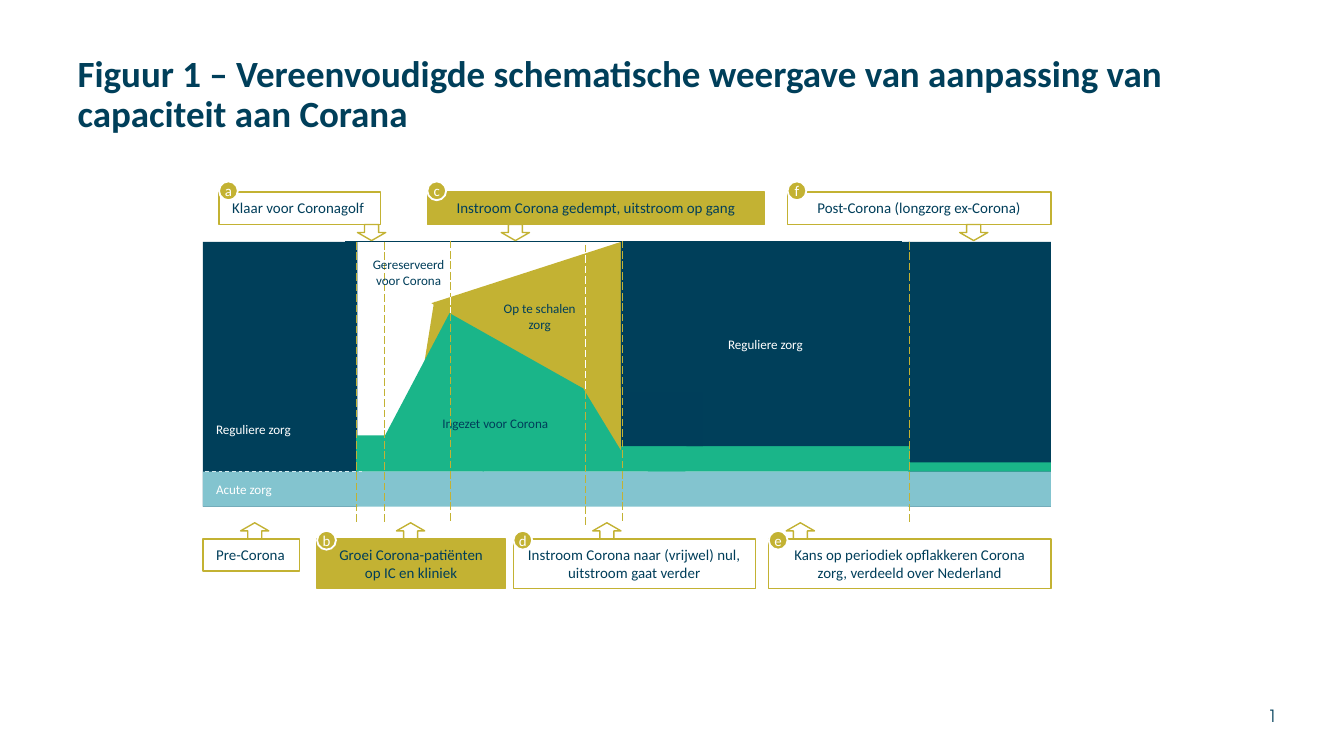
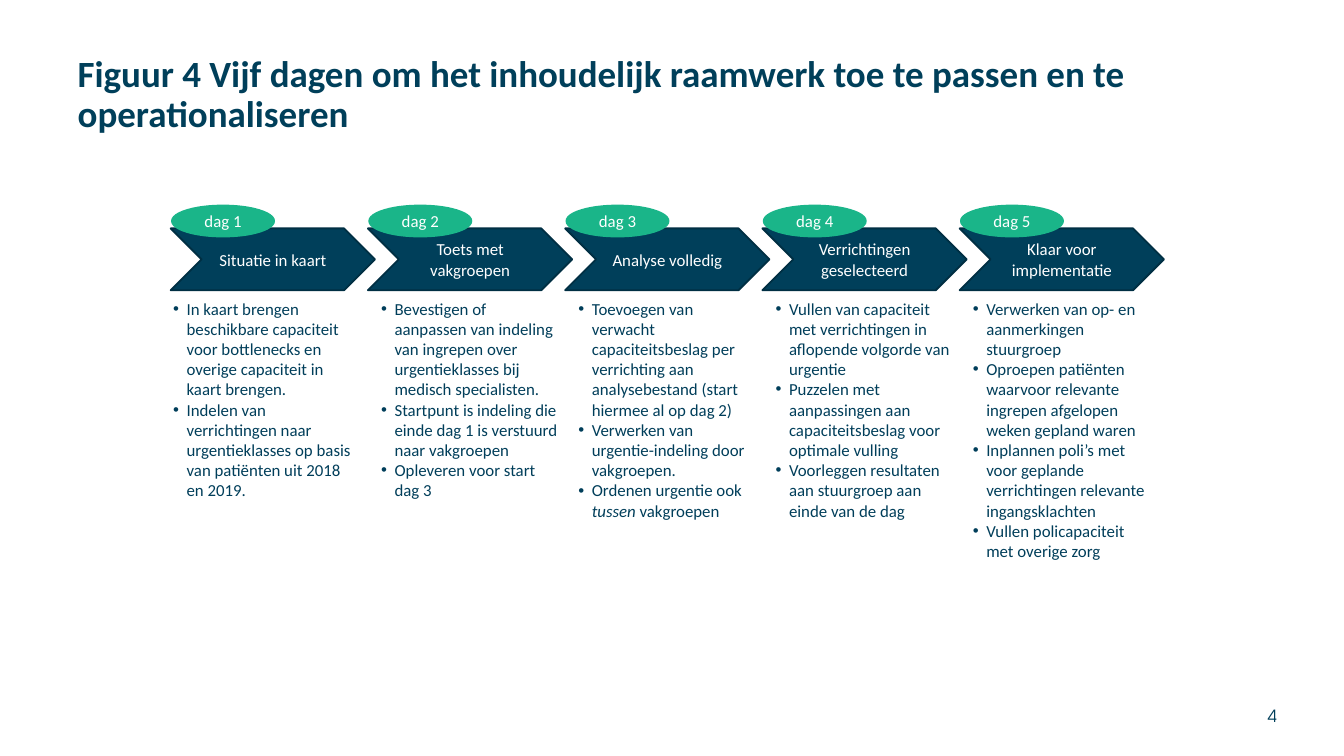
import dataclasses

import pptx
import pptx.dml.color
import pptx.enum.dml
import pptx.enum.shapes
import pptx.enum.text
import pptx.oxml
import pptx.oxml.ns
import pptx.util
from pptx.util import Inches

SHAPE = pptx.enum.shapes.MSO_SHAPE
DASH = pptx.enum.dml.MSO_LINE
ALIGN = pptx.enum.text.PP_ALIGN
ANCHOR = pptx.enum.text.MSO_ANCHOR


@dataclasses.dataclass(frozen=True)
class Theme:
    navy: str = "003F5A"
    text: str = "003E5A"
    edge: str = "002F43"
    green: str = "1AB589"
    gold: str = "C3B233"
    blue: str = "83C4CF"
    white: str = "FFFFFF"
    font: str = "Calibri"
    number_font: str = "TeX Gyre Adventor"
    title_size: float = 19.8
    body_size: float = 9
    callout_size: float = 8
    area_size: float = 7


THEME = Theme()


def rgb(value):
    return pptx.dml.color.RGBColor.from_string(value)


# Text
def add_bullet(paragraph):
    properties = paragraph._p.get_or_add_pPr()
    properties.set("marL", str(Inches(0.1)))
    properties.set("indent", str(Inches(-0.1)))
    namespace = pptx.oxml.ns.nsdecls("a")
    for tag in ('buFont typeface="Arial"', 'buChar char="•"'):
        properties.append(pptx.oxml.parse_xml(f"<a:{tag} {namespace}/>"))


def write(shape, paragraphs, size, color=THEME.text, align=ALIGN.CENTER,
          anchor=ANCHOR.MIDDLE, margins=(0.1, 0.05, 0.1, 0.05), wrap=True,
          bold=False, font=THEME.font, bullets=False, spacing=None):
    """Fill a shape with paragraphs; words between asterisks are italic."""
    frame = shape.text_frame
    frame.word_wrap = wrap
    frame.vertical_anchor = anchor
    (frame.margin_left, frame.margin_top,
     frame.margin_right, frame.margin_bottom) = map(Inches, margins)
    for index, content in enumerate(paragraphs):
        paragraph = frame.add_paragraph() if index else frame.paragraphs[0]
        paragraph.alignment = align
        if spacing:
            paragraph.line_spacing = spacing
        if bullets:
            add_bullet(paragraph)
        for part, words in enumerate(content.split("*")):
            run = paragraph.add_run()
            run.text = words
            run.font.name = font
            run.font.size = pptx.util.Pt(size)
            run.font.bold = bold
            run.font.italic = part % 2 == 1
            run.font.color.rgb = rgb(color)


def add_text(shapes, box, paragraphs, size, **options):
    shape = shapes.add_textbox(*map(Inches, box))
    write(shape, paragraphs, size, **options)


# Shapes and lines
def add_shape(shapes, kind, box, fill=None, line=None, width=0.75,
              rotation=0, adjustment=None):
    shape = shapes.add_shape(kind, *map(Inches, box))
    shape.shadow.inherit = False
    shape.rotation = rotation
    if adjustment is not None:
        shape.adjustments[0] = adjustment
    if fill:
        shape.fill.solid()
        shape.fill.fore_color.rgb = rgb(fill)
    else:
        shape.fill.background()
    if line:
        shape.line.color.rgb = rgb(line)
        shape.line.width = pptx.util.Pt(width)
    else:
        shape.line.fill.background()
    return shape


def add_line(shapes, start, end, color, dash=None):
    line = shapes.add_connector(pptx.enum.shapes.MSO_CONNECTOR.STRAIGHT,
                                *map(Inches, (*start, *end)))
    line.line.color.rgb = rgb(color)
    line.line.width = pptx.util.Pt(0.5)
    if dash:
        line.line.dash_style = dash
    line._element.spPr.append(pptx.oxml.parse_xml(
        f'<a:effectLst {pptx.oxml.ns.nsdecls("a")}/>'))


# Parts of the slides
def add_slide(presentation, title, number):
    slide = presentation.slides.add_slide(presentation.slide_layouts[6])
    add_text(slide.shapes, (9.1, 5.2, 0.5, 0.3), [number], THEME.body_size,
             color=THEME.navy, align=ALIGN.RIGHT, anchor=ANCHOR.TOP,
             font=THEME.number_font)
    add_text(slide.shapes, (0.48, 0.42, 9.04, 0.58), [title],
             THEME.title_size, color=THEME.navy, align=ALIGN.LEFT, bold=True,
             spacing=0.9)
    return slide


def add_callout(slide, letter, label, box, arrow_left, filled=False,
                one_line=False):
    """Framed phase label with an arrow to the diagram and a letter badge."""
    left, top, width, height = box
    above = top < 2
    shapes = slide.shapes.add_group_shape().shapes
    frame = add_shape(shapes, SHAPE.RECTANGLE, box,
                      THEME.gold if filled else None, THEME.gold)
    write(frame, [label], THEME.callout_size, anchor=ANCHOR.TOP,
          wrap=not one_line, align=ALIGN.LEFT if one_line else ALIGN.CENTER)
    arrow_top = top + height if above else top - 0.12
    add_shape(shapes, SHAPE.DOWN_ARROW, (arrow_left, arrow_top, 0.21, 0.12),
              line=THEME.gold, rotation=0 if above else 180)
    if letter:
        badge_top = top - (0.08 if above else 0.06)
        badge = add_shape(shapes, SHAPE.OVAL, (left, badge_top, 0.14, 0.14),
                          THEME.gold, THEME.white, 1)
        write(badge, [letter], THEME.callout_size, THEME.white,
              margins=(0, 0, 0, 0), wrap=False)


def add_day(slide, day, left, heading, tasks, tasks_left):
    shapes = slide.shapes.add_group_shape().shapes
    chevron = add_shape(shapes, SHAPE.CHEVRON, (left, 1.7, 1.52, 0.46),
                        THEME.navy, THEME.edge, 1)
    write(chevron, [heading], THEME.body_size, THEME.white,
          margins=(0.05, 0, 0.05, 0))
    add_text(shapes, (tasks_left, 2.17, 1.52, 2.07), tasks, THEME.body_size,
             align=ALIGN.LEFT, anchor=ANCHOR.TOP, bullets=True)
    oval = add_shape(shapes, SHAPE.OVAL, (left + 0.01, 1.53, 0.76, 0.23),
                     THEME.green, THEME.green, 1)
    write(oval, [f"dag {day}"], THEME.body_size, THEME.white,
          margins=(0, 0, 0, 0))


def draw_care_areas(shapes):
    # Regular care before and after, reserved and scaled-up care
    before = add_shape(shapes, SHAPE.RECTANGLE, (1.51, 1.8, 1.15, 1.97),
                       THEME.navy)
    write(before, ["Reguliere zorg"], THEME.area_size, THEME.white,
          align=ALIGN.LEFT, anchor=ANCHOR.BOTTOM,
          margins=(0.1, 0.05, 0.1, 0.52))
    add_shape(shapes, SHAPE.RECTANGLE, (2.65, 3.24, 0.95, 0.27), THEME.green)
    add_shape(shapes, SHAPE.RECTANGLE, (6.76, 1.8, 1.06, 1.97), THEME.navy)
    add_shape(shapes, SHAPE.ISOSCELES_TRIANGLE, (3.26, 1.75, 1.31, 1.41),
              THEME.gold, rotation=270, adjustment=0.652)
    for box in ((6.76, 3.44, 1.06, 0.07), (3.59, 3.32, 1.51, 0.19),
                (4.82, 3.32, 1.95, 0.19)):
        add_shape(shapes, SHAPE.RECTANGLE, box, THEME.green)
    add_line(shapes, (2.57, 1.8), (6.71, 1.8), THEME.navy)
    add_line(shapes, (1.13, 3.51), (2.71, 3.51), THEME.white, DASH.DASH)
    after = add_shape(shapes, SHAPE.RECTANGLE, (4.62, 1.8, 2.15, 1.52),
                      THEME.navy)
    write(after, ["Reguliere zorg"], THEME.area_size, THEME.white)

    # Corona care
    add_shape(shapes, SHAPE.RECTANGLE, (3.19, 2.28, 0.47, 0.47), THEME.gold,
              rotation=9.1)
    corona = add_shape(shapes, SHAPE.ISOSCELES_TRIANGLE,
                       (2.77, 2.33, 2.51, 1.09), THEME.green,
                       adjustment=0.229)
    write(corona, ["Ingezet voor Corona"], THEME.area_size)
    add_shape(shapes, SHAPE.RECTANGLE, (4.62, 2.92, 0.61, 0.4), THEME.text)

    # Acute care
    acute = add_shape(shapes, SHAPE.RECTANGLE, (1.51, 3.51, 6.31, 0.26),
                      THEME.blue)
    write(acute, ["Acute zorg"], THEME.area_size, THEME.white,
          align=ALIGN.LEFT)
    add_shape(shapes, SHAPE.RIGHT_TRIANGLE, (4.34, 2.89, 0.28, 0.46),
              THEME.gold, rotation=180)


def draw_phase_lines(shapes):
    for x, top in ((2.65, 1.8), (6.77, 1.8), (3.35, 1.79), (4.63, 1.79),
                   (2.86, 1.8), (4.36, 1.82)):
        add_line(shapes, (x, top), (x, top + 2.1), THEME.gold, DASH.LONG_DASH)
    for x, top, bottom in ((4.36, 1.9, 2.9), (3.35, 2.21, 2.33)):
        add_line(shapes, (x, top), (x, bottom), THEME.white, DASH.LONG_DASH)


def build_capacity_slide(presentation):
    slide = add_slide(
        presentation, "Figuur 1 – Vereenvoudigde schematische weergave van "
        "aanpassing van capaciteit aan Corana", "1")
    draw_care_areas(slide.shapes)
    draw_phase_lines(slide.shapes)

    # Phases above and below the diagram
    add_callout(slide, "a", "Klaar voor Coronagolf",
                (1.63, 1.43, 1.2, 0.24), 2.66, one_line=True)
    add_callout(slide, None, "Pre-Corona",
                (1.51, 4.01, 0.72, 0.24), 1.79, one_line=True)
    add_callout(slide, "b", "Groei Corona-patiënten op IC en kliniek",
                (2.36, 4.01, 1.4, 0.37), 2.95, filled=True)
    add_callout(slide, "c", "Instroom Corona gedempt, uitstroom op gang",
                (3.18, 1.43, 2.51, 0.24), 3.73, filled=True)
    add_callout(slide, "d", "Instroom Corona naar (vrijwel) nul, "
                "uitstroom gaat verder", (3.82, 4.01, 1.8, 0.37), 4.41)
    add_callout(slide, "e", "Kans op periodiek opflakkeren Corona zorg, "
                "verdeeld over Nederland", (5.72, 4.01, 2.1, 0.37), 5.85)
    add_callout(slide, "f", "Post-Corona (longzorg ex-Corona)",
                (5.86, 1.43, 1.96, 0.24), 7.14)

    # Labels inside the diagram
    for box, label in (((2.58, 1.86, 0.92, 0.34), "Gereserveerd voor Corona"),
                       ((3.64, 2.19, 0.75, 0.34), "Op te schalen zorg")):
        add_text(slide.shapes, box, [label], THEME.area_size,
                 anchor=ANCHOR.TOP)


DAYS = (
    ("Situatie in kaart", (
        "In kaart brengen beschikbare capaciteit voor bottlenecks en overige "
        "capaciteit in kaart brengen.",
        "Indelen van verrichtingen naar urgentieklasses op basis van "
        "patiënten uit 2018 en 2019.")),
    ("Toets met vakgroepen", (
        "Bevestigen of aanpassen van indeling van ingrepen over "
        "urgentieklasses bij medisch specialisten.",
        "Startpunt is indeling die einde dag 1 is verstuurd naar vakgroepen",
        "Opleveren voor start dag 3")),
    ("Analyse volledig", (
        "Toevoegen van verwacht capaciteitsbeslag per verrichting aan "
        "analysebestand (start hiermee al op dag 2)",
        "Verwerken van urgentie-indeling door vakgroepen.",
        "Ordenen urgentie ook *tussen *vakgroepen")),
    ("Verrichtingen geselecteerd", (
        "Vullen van capaciteit met verrichtingen in aflopende volgorde van "
        "urgentie",
        "Puzzelen met aanpassingen aan capaciteitsbeslag voor optimale "
        "vulling",
        "Voorleggen resultaten aan stuurgroep aan einde van de dag")),
    ("Klaar voor implementatie", (
        "Verwerken van op- en aanmerkingen stuurgroep",
        "Oproepen patiënten waarvoor relevante ingrepen afgelopen weken "
        "gepland waren",
        "Inplannen poli’s met voor geplande verrichtingen relevante "
        "ingangsklachten",
        "Vullen policapaciteit met overige zorg")),
)


def build_days_slide(presentation):
    slide = add_slide(
        presentation, "Figuur 4 Vijf dagen om het inhoudelijk raamwerk toe "
        "te passen en te operationaliseren", "4")
    first_left, last_left = 1.27, 7.14
    step = (last_left - first_left) / (len(DAYS) - 1)
    for index, (heading, tasks) in enumerate(DAYS):
        left = first_left + index * step
        tasks_left = left if index else left - 0.08
        add_day(slide, index + 1, left, heading, tasks, tasks_left)


def main():
    presentation = pptx.Presentation()
    # Widescreen, 16:9
    presentation.slide_width = Inches(10)
    presentation.slide_height = Inches(10 * 9 / 16)
    build_capacity_slide(presentation)
    build_days_slide(presentation)
    presentation.save("out.pptx")


if __name__ == "__main__":
    main()
